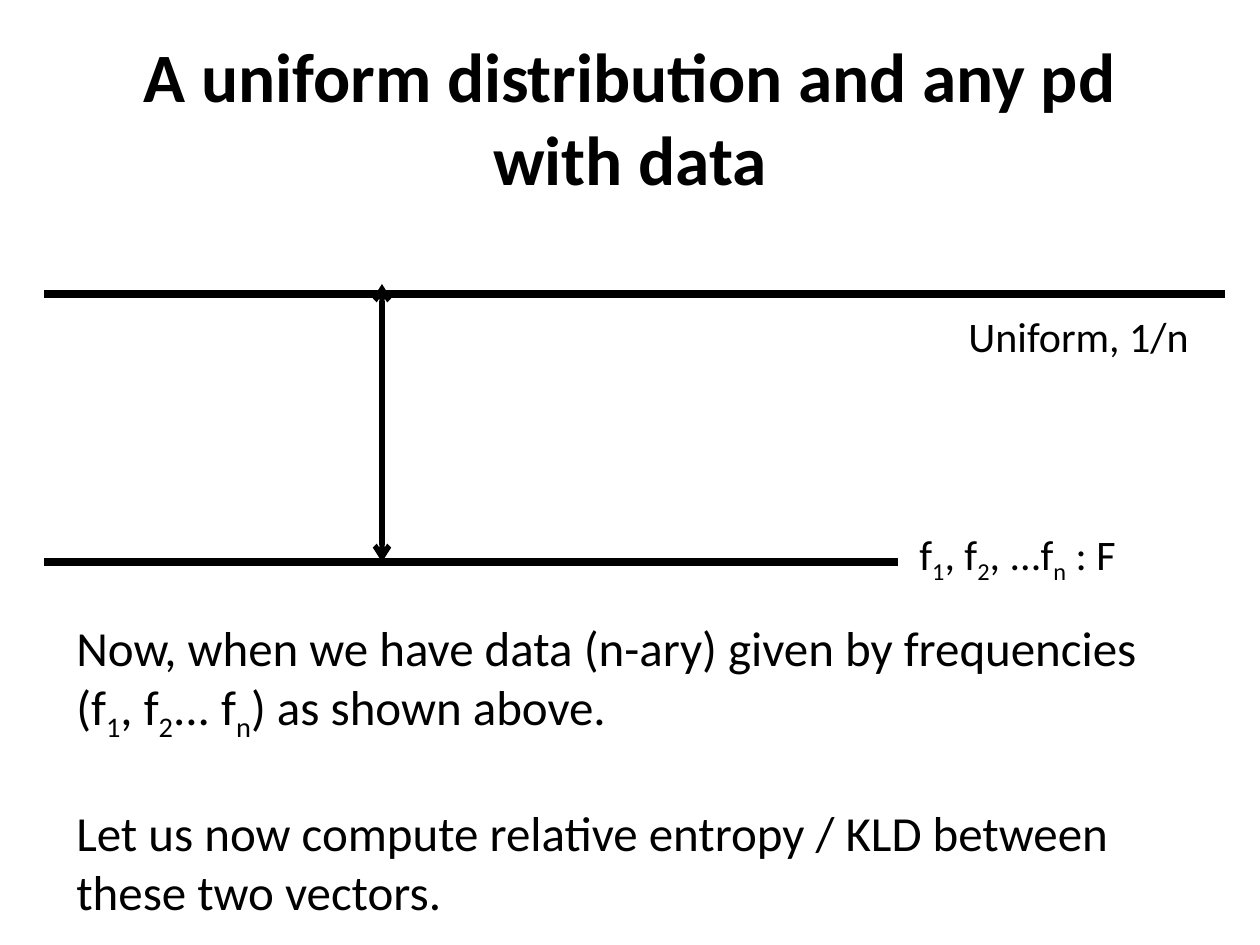
from lxml import etree
from pptx import Presentation
from pptx.dml.color import RGBColor
from pptx.enum.shapes import MSO_CONNECTOR
from pptx.enum.text import MSO_ANCHOR, MSO_AUTO_SIZE, PP_ALIGN
from pptx.oxml.ns import qn
from pptx.util import Emu, Pt

STRAIGHT = MSO_CONNECTOR.STRAIGHT
MIDDLE = MSO_ANCHOR.MIDDLE
CENTER = PP_ALIGN.CENTER
GROW = MSO_AUTO_SIZE.SHAPE_TO_FIT_TEXT
INK = "000000"

TITLE = "A uniform distribution and any pd with data"
TITLE_BOX = (63, 38, 1134, 157)

# ends, width, arrows
LINES = [
    ((44, 294, 1225, 294), 4.5, False),
    ((44, 562, 898, 562), 4.5, False),
    ((382, 284, 382, 562), 3, True),
]

# box, size, wrap, paragraphs of (gap before, parts); every second part is a subscript
TEXTS = [
    ((956, 304, 248, 63), 24, False, [(0, ["Uniform, 1/n"])]),
    ((907, 522, 237, 63), 24, False,
     [(0, ["f", "1", ", f", "2", ", ...f", "n", " : F"])]),
    ((64, 611, 1131, 310), 28, True, [
        (0, ["Now, when we have data (n-ary) given by frequencies (f", "1",
             ", f", "2", "... f", "n", ") as shown above."]),
        (34, ["Let us now compute relative entropy / KLD between"]),
        (0, ["these two vectors."]),
    ]),
]


def px(n):
    return Emu(round(n * 914400 / 126))


def tint(code):
    return RGBColor.from_string(code)


def style(font, **form):
    for key, val in form.items():
        setattr(font, key, val)
    font.name = "Calibri"
    font.color.rgb = tint(INK)


def add_line(slide, ends, width, arrows):
    line = slide.shapes.add_connector(STRAIGHT, *map(px, ends))
    line.line.width = Pt(width)
    line.line.color.rgb = tint(INK)
    if arrows:
        for tag in ("a:headEnd", "a:tailEnd"):
            etree.SubElement(line.line._get_or_add_ln(), qn(tag), type="arrow")
    etree.SubElement(line._element.spPr, qn("a:effectLst"))


def add_text(slide, box, size, wrap, paras):
    frame = slide.shapes.add_textbox(*map(px, box)).text_frame
    frame.word_wrap = wrap
    frame.auto_size = GROW
    for i, (gap, parts) in enumerate(paras):
        para = frame.add_paragraph() if i else frame.paragraphs[0]
        para.space_before = Pt(gap)
        for j, part in enumerate(parts):
            run = para.add_run()
            run.text = part
            style(run.font, size=Pt(size))
            if j % 2:
                run.font._element.set("baseline", "-25000")


def main():
    deck = Presentation()
    deck.slide_width, deck.slide_height = px(1260), px(945)
    slide = deck.slides.add_slide(deck.slide_layouts[5])
    title = slide.shapes.title
    title.left, title.top, title.width, title.height = map(px, TITLE_BOX)
    frame = title.text_frame
    frame.text = TITLE
    frame.vertical_anchor = MIDDLE
    frame.word_wrap = True
    para = frame.paragraphs[0]
    para.alignment = CENTER
    style(para.runs[0].font, size=Pt(39.6), bold=True)
    for item in LINES:
        add_line(slide, *item)
    for item in TEXTS:
        add_text(slide, *item)
    deck.save("out.pptx")


if __name__ == "__main__":
    main()
